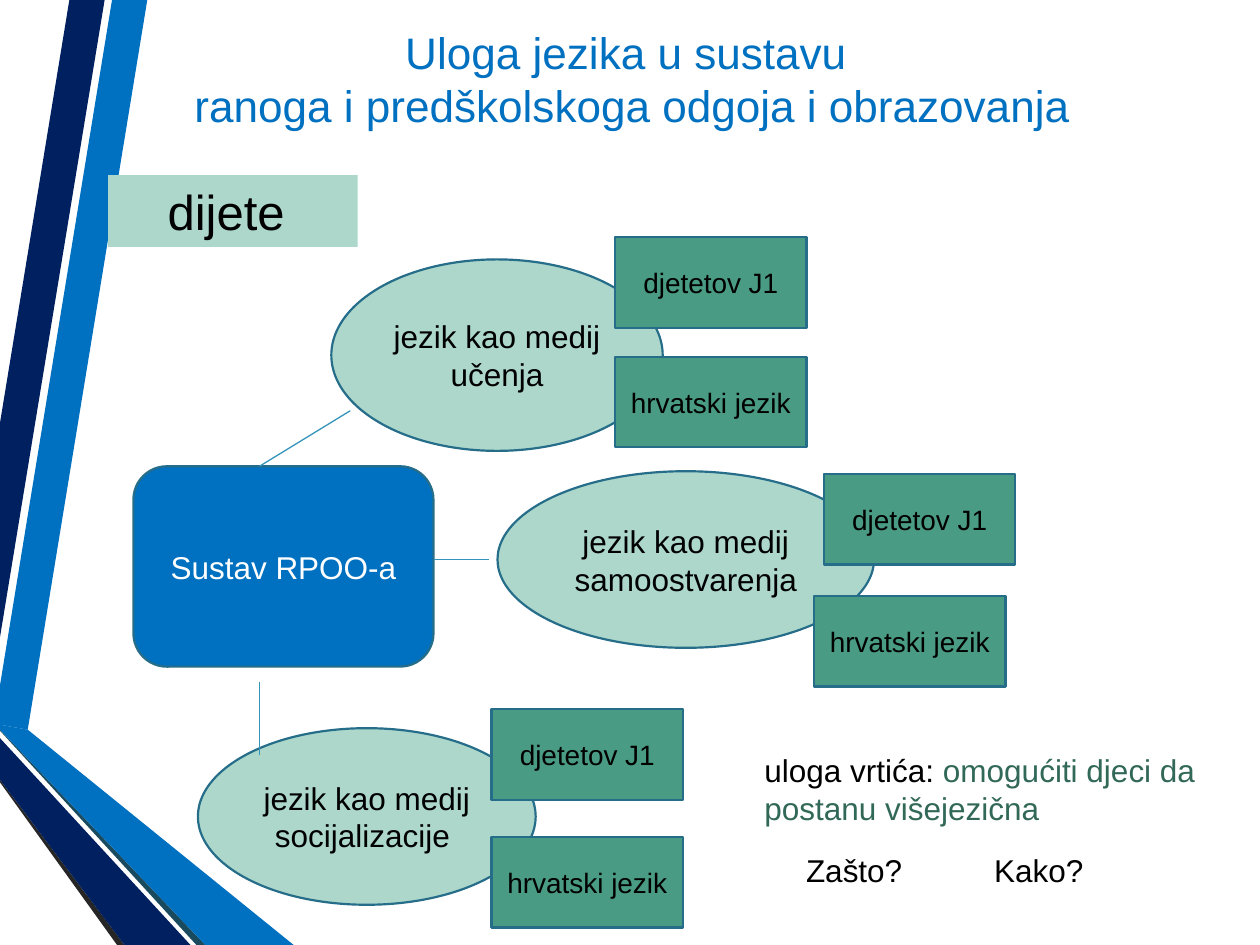
from dataclasses import dataclass

from lxml.etree import SubElement
from pptx import Presentation
from pptx.dml.color import RGBColor
from pptx.enum.shapes import MSO_CONNECTOR, MSO_SHAPE
from pptx.enum.text import MSO_ANCHOR, MSO_AUTO_SIZE, PP_ALIGN
from pptx.oxml.ns import qn
from pptx.util import Cm, Pt


@dataclass(frozen=True)
class Theme:
    font: str = "Arial"
    blue: str = "0070C0"
    navy: str = "002060"
    charcoal: str = "262626"
    petrol: str = "1A4A5D"
    mint: str = "ACD7CA"
    green: str = "4A9B83"
    dark_green: str = "316857"
    outline: str = "266D8A"
    link: str = "3494BA"
    black: str = "000000"
    white: str = "FFFFFF"
    title_size: float = 25.2
    child_size: float = 28
    body_size: float = 18
    tag_size: float = 16


theme = Theme()


def format_text(box, size, color, align=PP_ALIGN.CENTER, anchor=MSO_ANCHOR.MIDDLE):
    frame = box.text_frame
    frame.word_wrap = True
    frame.vertical_anchor = anchor
    for para in frame.paragraphs:
        para.alignment = align
        for span in para.runs:
            span.font.name = theme.font
            span.font.size = Pt(size)
            span.font.color.rgb = RGBColor.from_string(color)


def add_box(shapes, kind, bounds, text, fill, size, color=theme.black, outlined=True):
    box = shapes.add_shape(kind, *[Cm(length) for length in bounds])
    box.shadow.inherit = False
    box.fill.solid()
    box.fill.fore_color.rgb = RGBColor.from_string(fill)
    if outlined:
        box.line.color.rgb = RGBColor.from_string(theme.outline)
        box.line.width = Pt(1.25)
    else:
        box.line.fill.background()
    box.text_frame.text = text
    format_text(box, size, color)
    return box


deck = Presentation()
deck.slide_width, deck.slide_height = Cm(25.4), Cm(19.05)
page = deck.slides.add_slide(deck.slide_layouts[5])

# Angled bands along the left edge
bands = page.shapes.add_group_shape().shapes
for color, corners in [
    (theme.blue, [(0, 13.82), (0, 14.61), (0.56, 14.71), (2.97, 0), (2.26, 0)]),
    (theme.navy, [(2.11, 0), (1.4, 0), (0, 8.53), (0, 12.85)]),
    (theme.charcoal, [(0, 15.72), (0, 15.77), (2.36, 19.05), (2.51, 19.05)]),
    (theme.petrol, [(0, 14.71), (0, 14.73), (3.96, 19.05), (4.14, 19.05)]),
    (theme.blue, [(0, 14.71), (4.14, 19.05), (5.92, 19.05), (0.56, 14.71), (0, 14.61)]),
    (theme.navy, [(0, 15.72), (2.51, 19.05), (3.84, 19.05), (0, 14.88)]),
]:
    points = [(Cm(x), Cm(y)) for x, y in corners]
    outline = bands.build_freeform(*points[0])
    outline.add_line_segments(points[1:], close=True)
    band = outline.convert_to_shape()
    band.shadow.inherit = False
    band.fill.solid()
    band.fill.fore_color.rgb = RGBColor.from_string(color)
    band.line.fill.background()

# Title
title = page.shapes.title
title.left, title.top, title.width, title.height = Cm(1.4), Cm(0.33), Cm(22.68), Cm(2.51)
title.text_frame.text = "Uloga jezika u sustavu \vranoga i predškolskoga odgoja i obrazovanja"
title.text_frame.auto_size = MSO_AUTO_SIZE.NONE
format_text(title, theme.title_size, theme.blue)

# System and the three roles of language
diagram = page.shapes.add_group_shape().shapes
for kind, bounds, text, fill, color in [
    (MSO_SHAPE.OVAL, (3.99, 14.68, 6.81, 3.56),
     "jezik kao medij socijalizacije ", theme.mint, theme.black),
    (MSO_SHAPE.ROUNDED_RECTANGLE, (2.69, 9.4, 6.05, 4.04),
     "Sustav RPOO-a", theme.blue, theme.white),
    (MSO_SHAPE.OVAL, (6.68, 5.23, 6.68, 3.86),
     "jezik kao medij\nučenja", theme.mint, theme.black),
    (MSO_SHAPE.OVAL, (10.03, 9.5, 7.59, 3.56),
     "jezik kao medij samoostvarenja", theme.mint, theme.black),
]:
    add_box(diagram, kind, bounds, text, fill, theme.body_size, color)

# Lines from the system to the roles
for ends in [
    (5.23, 9.4, 7.06, 8.28),
    (5.23, 13.74, 5.23, 15.21),
    (8.74, 11.28, 9.86, 11.28),
]:
    link = diagram.add_connector(MSO_CONNECTOR.STRAIGHT, *[Cm(length) for length in ends])
    link.line.color.rgb = RGBColor.from_string(theme.link)
    link.line.width = Pt(0.75)
    SubElement(link._element.spPr, qn("a:effectLst"))

# Child label
child = add_box(page.shapes, MSO_SHAPE.RECTANGLE, (2.18, 3.53, 5.03, 1.45), "dijete ",
                theme.mint, theme.child_size, outlined=False)
child.text_frame.vertical_anchor = MSO_ANCHOR.TOP

# Language tags on each role
for text, corners in [
    ("hrvatski jezik", [(12.4, 7.19), (16.41, 12.01), (9.91, 16.87)]),
    ("djetetov J1", [(12.4, 4.78), (16.61, 9.55), (9.91, 14.3)]),
]:
    for left, top in corners:
        add_box(page.shapes, MSO_SHAPE.RECTANGLE, (left, top, 3.86, 1.83), text,
                theme.green, theme.tag_size)

# Kindergarten's role and the two questions
for bounds, text, answer in [
    ((13.89, 15.01, 11.05, 1.8), "uloga vrtića: ", "omogućiti djeci da postanu višejezična"),
    ((14.73, 17.04, 5.38, 1.02), "Zašto?", ""),
    ((18.52, 17.04, 5.38, 1.02), "Kako?", ""),
]:
    note = page.shapes.add_textbox(*[Cm(length) for length in bounds])
    note.text_frame.text = text
    para = note.text_frame.paragraphs[0]
    para.level = 1
    if answer:
        para.add_run().text = answer
    format_text(note, theme.body_size, theme.black, PP_ALIGN.LEFT, MSO_ANCHOR.TOP)
    for span in para.runs[1:]:
        span.font.color.rgb = RGBColor.from_string(theme.dark_green)

deck.save("out.pptx")
